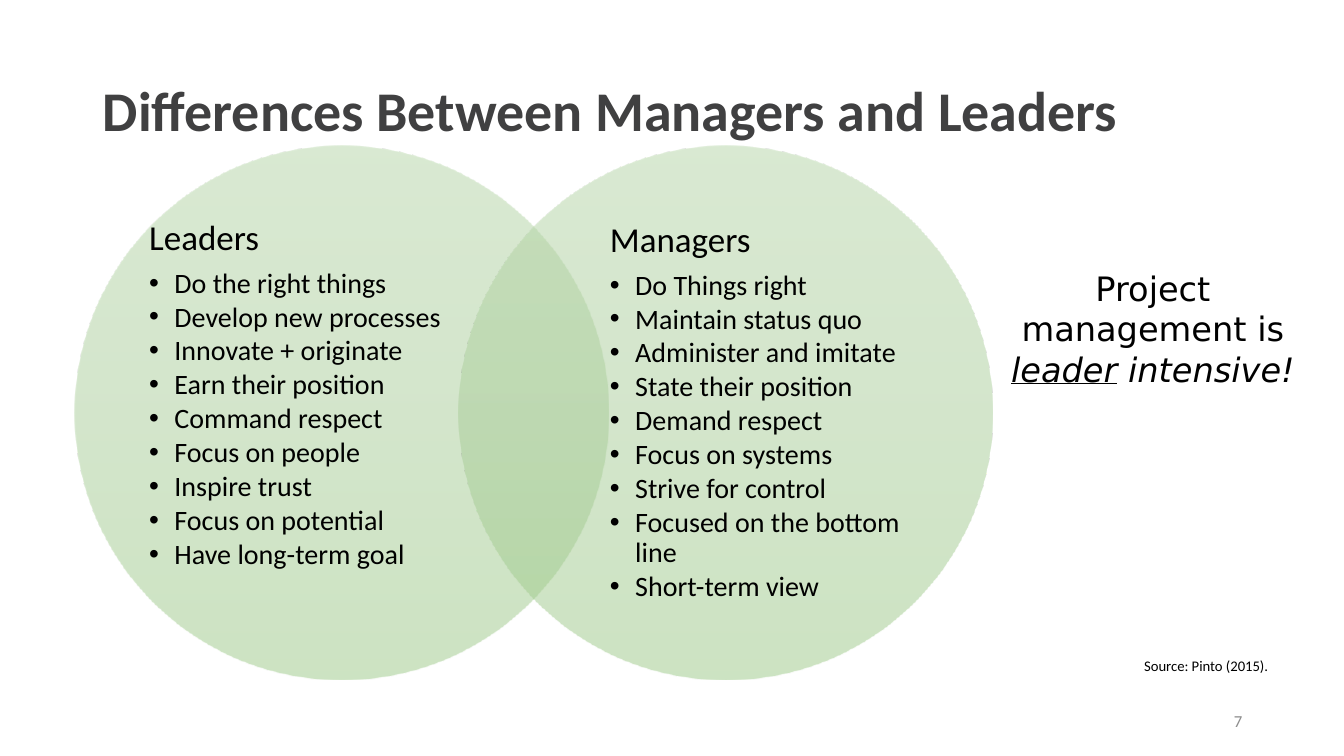
from lxml import etree
from pptx import Presentation
from pptx.dml.color import RGBColor
from pptx.enum.shapes import MSO_SHAPE
from pptx.enum.text import MSO_ANCHOR, MSO_AUTO_SIZE, PP_ALIGN
from pptx.oxml import parse_xml
from pptx.oxml.ns import nsdecls, qn
from pptx.util import Inches, Pt


def rgb(value):
    return RGBColor.from_string(value)


class Deck:
    FONT = "Calibri"
    BLACK = "000000"
    GREENS = ((0, "B5D5A7"), (50, "AACE9A"), (100, "9CC987"))

    def __init__(self, prs):
        self.slide = prs.slides.add_slide(prs.slide_layouts[3])

    def place(self, sp, left, top, width, height):
        sp.left, sp.top = Inches(left), Inches(top)
        sp.width, sp.height = Inches(width), Inches(height)

    def run(self, p, text, size, color=BLACK, font=FONT):
        r = p.add_run()
        r.text = text
        r.font.size = Pt(size)
        r.font.name = font
        r.font.color.rgb = rgb(color)
        return r

    def title(self, text, *box):
        sp = self.slide.shapes.title
        self.place(sp, *box)
        tf = sp.text_frame
        tf.auto_size = MSO_AUTO_SIZE.NONE
        tf.vertical_anchor = MSO_ANCHOR.MIDDLE
        p = tf.paragraphs[0]
        p.alignment = PP_ALIGN.LEFT
        p.line_spacing = 0.9
        self.run(p, text, 40, "404041").font.bold = True

    def text(self, box, align=PP_ALIGN.LEFT, anchor=MSO_ANCHOR.TOP):
        sp = self.slide.shapes.add_textbox(*map(Inches, box))
        tf = sp.text_frame
        tf.word_wrap = True
        tf.vertical_anchor = anchor
        p = tf.paragraphs[0]
        p.alignment = align
        return p

    def circle(self, left, top, size):
        sp = self.slide.shapes.add_shape(
            MSO_SHAPE.OVAL, *map(Inches, (left, top, size, size)))
        sp.shadow.inherit = False
        sp.line.fill.background()
        stops = "".join(
            f'<a:gs pos="{pos * 1000}"><a:srgbClr val="{color}">'
            '<a:alpha val="50000"/></a:srgbClr></a:gs>'
            for pos, color in self.GREENS)
        fill = parse_xml(
            f'<a:gradFill {nsdecls("a")} rotWithShape="1"><a:gsLst>{stops}</a:gsLst>'
            '<a:lin ang="5400000" scaled="0"/></a:gradFill>')
        sp._element.spPr.find(qn("a:prstGeom")).addnext(fill)

    def list(self, idx, heading, items, *box):
        sp = self.slide.placeholders[idx]
        self.slide.shapes._spTree.append(sp._element)
        self.place(sp, *box)
        tf = sp.text_frame
        tf.auto_size = MSO_AUTO_SIZE.NONE
        tf.vertical_anchor = MSO_ANCHOR.MIDDLE
        tf.margin_left = tf.margin_top = tf.margin_right = tf.margin_bottom = 0
        for i, item in enumerate([heading, *items]):
            p = tf.add_paragraph() if i else tf.paragraphs[0]
            indent = Inches(0.25) if i else 0
            p.level = 1 if i else 0
            p.line_spacing = 0.9
            p.space_before = Pt(0)
            p.space_after = Pt(2.6 if i else 8)
            pPr = p._p.get_or_add_pPr()
            pPr.set("marL", str(indent))
            pPr.set("indent", str(-indent))
            if i:
                etree.SubElement(pPr, qn("a:buFont")).set("typeface", "Arial")
                etree.SubElement(pPr, qn("a:buChar")).set("char", "•")
            else:
                etree.SubElement(pPr, qn("a:buNone"))
            self.run(p, item, 20 if i else 25)


LEADERS = [
    "Do the right things", "Develop new processes", "Innovate + originate",
    "Earn their position", "Command respect", "Focus on people",
    "Inspire trust", "Focus on potential", "Have long-term goal",
]
MANAGERS = [
    "Do Things right", "Maintain status quo", "Administer and imitate",
    "State their position", "Demand respect", "Focus on systems",
    "Strive for control", "Focused on the bottom line", "Short-term view",
]


def main():
    prs = Presentation()
    prs.slide_width, prs.slide_height = Inches(13.33), Inches(7.5)
    deck = Deck(prs)

    deck.title("Differences Between Managers and Leaders", 0.92, 0.4, 11.5, 1.45)

    p = deck.text((9.77, 2.61, 3.33, 1.31), PP_ALIGN.CENTER)
    deck.run(p, "Project management is ", 24, font="DejaVu Sans")
    r = deck.run(p, "leader", 24, font="DejaVu Sans")
    r.font.italic = r.font.underline = True
    deck.run(p, " intensive!", 24, font="DejaVu Sans").font.italic = True

    p = deck.text((9.42, 6.95, 3, 0.4), PP_ALIGN.RIGHT, MSO_ANCHOR.MIDDLE)
    deck.run(p, "7", 12, "8C8C8C")
    deck.run(deck.text((11.25, 6.47, 1.63, 0.28)), "Source: Pinto (2015).", 10.5)

    deck.circle(0.74, 1.45, 5.29)
    deck.list(1, "Leaders", LEADERS, 1.48, 2.07, 3.05, 3.7)
    deck.circle(4.55, 1.45, 5.29)
    deck.list(2, "Managers", MANAGERS, 6.05, 2.07, 3.05, 4.04)

    prs.save("out.pptx")


if __name__ == "__main__":
    main()
